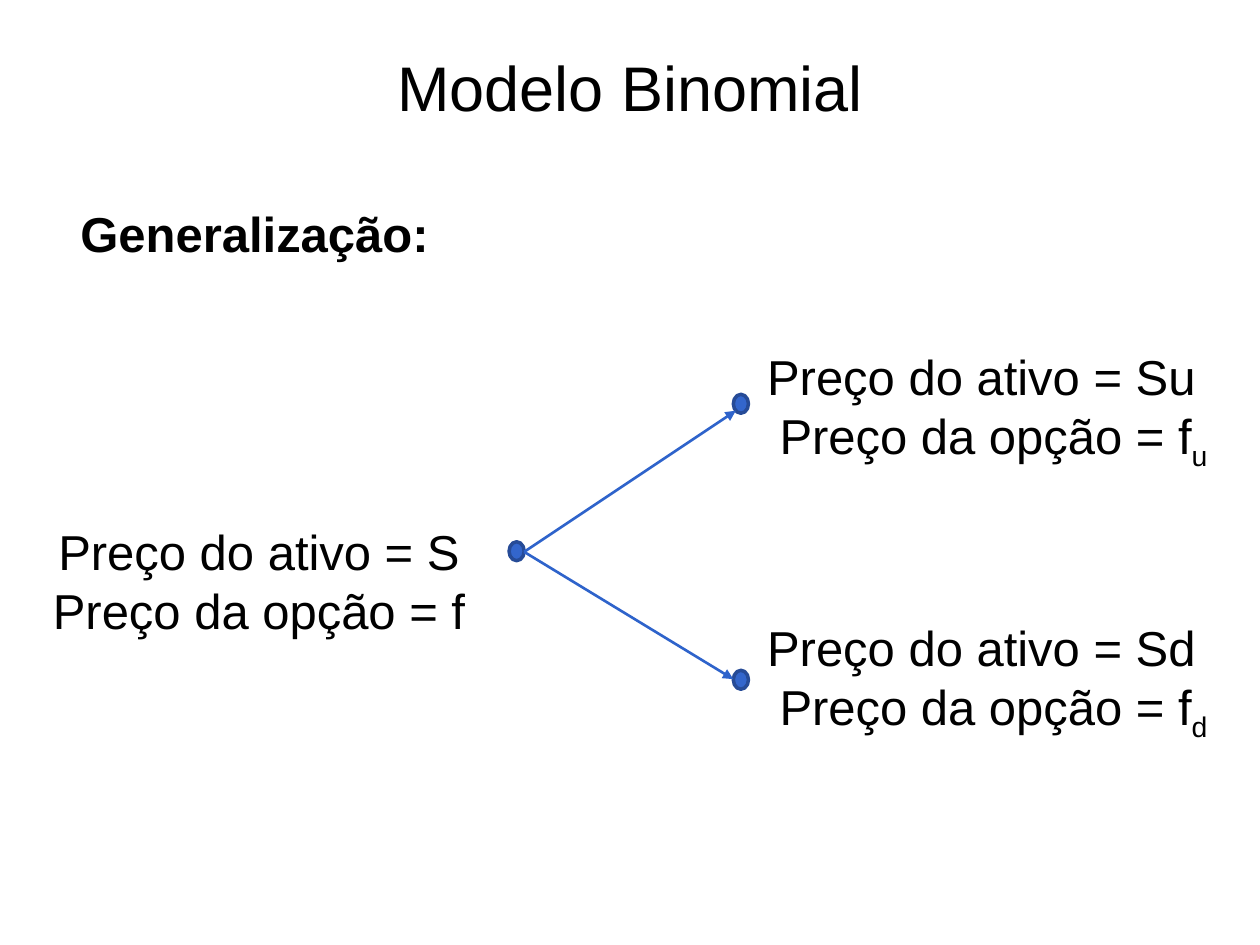
from lxml import etree
from pptx import Presentation
from pptx.dml.color import RGBColor
from pptx.enum.shapes import MSO_CONNECTOR, MSO_SHAPE
from pptx.enum.text import MSO_ANCHOR, PP_ALIGN
from pptx.oxml.ns import qn
from pptx.util import Inches, Pt

LEFT, CENTER = PP_ALIGN.LEFT, PP_ALIGN.CENTER
TOP, MIDDLE = MSO_ANCHOR.TOP, MSO_ANCHOR.MIDDLE
OVAL = MSO_SHAPE.OVAL
STRAIGHT = MSO_CONNECTOR.STRAIGHT


def color(value):
    return RGBColor.from_string(value)


class BinomialSlide:
    font = "Arial"
    text_color = "000000"
    node_fill = "3366CC"
    node_border = "264B97"
    branch_color = "2E63CB"
    node_width, node_height = 0.12, 0.15

    def __init__(self, presentation):
        self.slide = presentation.slides.add_slide(presentation.slide_layouts[6])

    def style_run(self, run, size, bold=False):
        run.font.name = self.font
        run.font.size = Pt(size)
        run.font.bold = bold
        run.font.color.rgb = color(self.text_color)

    def text(self, left, top, width, height, lines, size=28, align=CENTER,
             anchor=TOP, bold=False):
        shape = self.slide.shapes.add_textbox(
            Inches(left), Inches(top), Inches(width), Inches(height))
        frame = shape.text_frame
        frame.word_wrap = True
        frame.vertical_anchor = anchor
        frame.text = "\n".join(lines)
        for paragraph in frame.paragraphs:
            paragraph.alignment = align
            for run in paragraph.runs:
                self.style_run(run, size, bold)
        return frame

    def prices(self, left, top, state="", indent=None):
        lines = [f"Preço do ativo = S{state}", "Preço da opção = f"]
        asset, option = self.text(left, top, 4.01, 1.04, lines).paragraphs
        if indent is not None:
            asset.alignment = LEFT
            asset._p.get_or_add_pPr().set("marL", str(Inches(indent)))
        if state:
            subscript = option.add_run()
            subscript.text = state
            self.style_run(subscript, 28)
            subscript._r.get_or_add_rPr().set("baseline", "-25000")

    def node(self, left, top):
        shape = self.slide.shapes.add_shape(
            OVAL, Inches(left), Inches(top),
            Inches(self.node_width), Inches(self.node_height))
        shape.shadow.inherit = False
        shape.fill.solid()
        shape.fill.fore_color.rgb = color(self.node_fill)
        shape.line.color.rgb = color(self.node_border)
        shape.line.width = Pt(2)

    def branch(self, start, end):
        connector = self.slide.shapes.add_connector(
            STRAIGHT, *(Inches(value) for value in start + end))
        connector.line.color.rgb = color(self.branch_color)
        connector.line.width = Pt(1.5)
        line = connector.line._get_or_add_ln()
        etree.SubElement(line, qn("a:tailEnd"), type="triangle")
        etree.SubElement(connector._element.spPr, qn("a:effectLst"))


def main():
    presentation = Presentation()
    presentation.slide_width = Inches(10)
    presentation.slide_height = Inches(7.5)
    slide = BinomialSlide(presentation)

    slide.text(0.5, 0.3, 9, 0.77, ["Modelo Binomial"], size=36, anchor=MIDDLE)
    heading = slide.text(0.54, 1.38, 7.21, 0.83, ["Generalização:"],
                         align=LEFT, bold=True)
    heading.paragraphs[0].line_spacing = 1.4

    slide.prices(0.05, 4.09)
    slide.node(4.04, 4.3)
    outcomes = [("u", 2.7, 3.13, (5.84, 3.26)), ("d", 4.85, 5.32, (5.82, 5.39))]
    for state, text_top, node_top, arrow_end in outcomes:
        slide.prices(5.88, text_top, state, indent=0.11)
        slide.node(5.82, node_top)
        slide.branch((4.16, 4.38), arrow_end)

    presentation.save("out.pptx")


if __name__ == "__main__":
    main()
